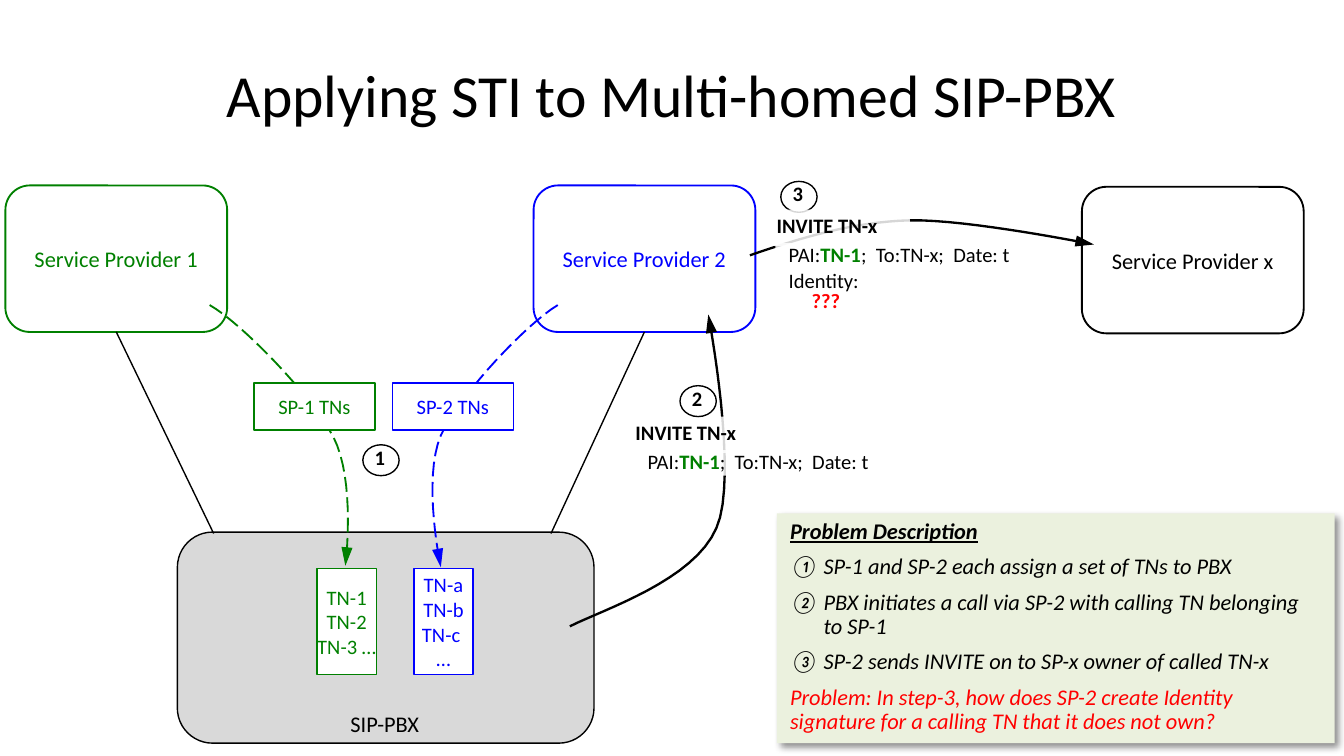
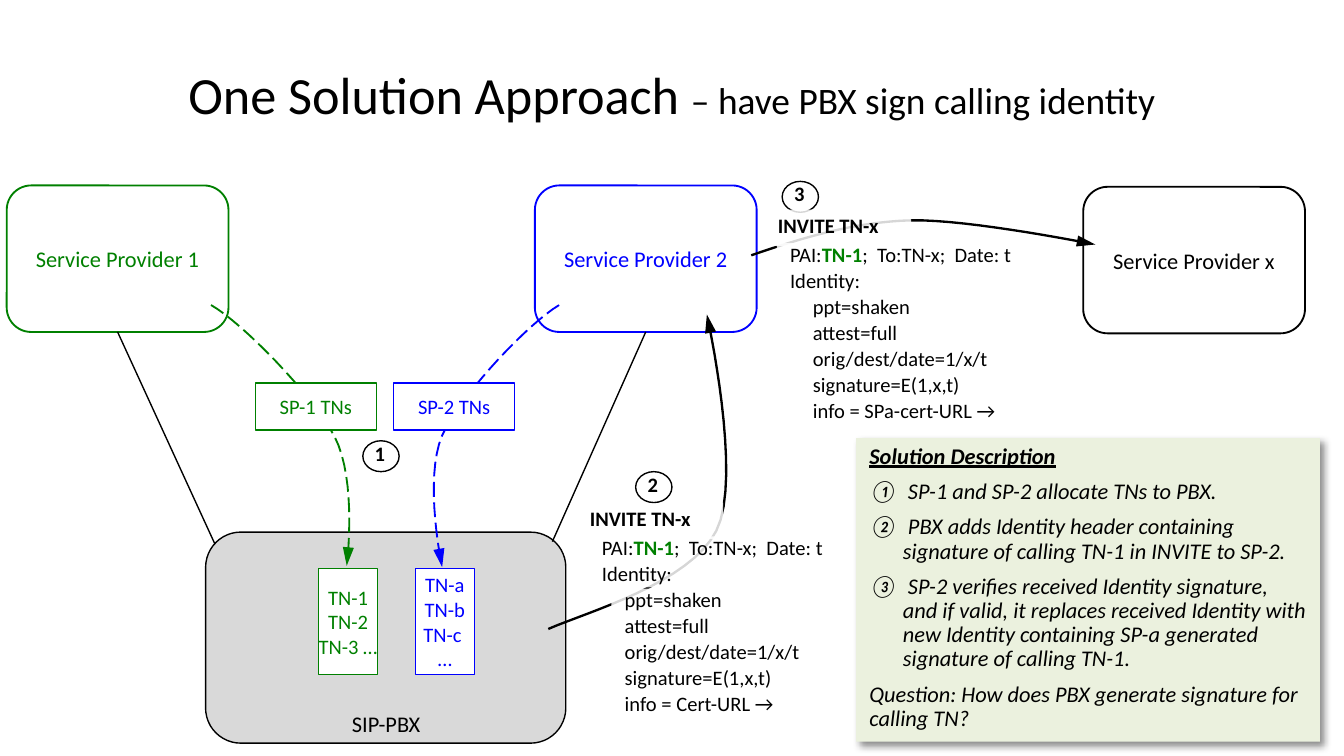
from lxml.etree import SubElement
from pptx import Presentation
from pptx.dml.color import RGBColor
from pptx.enum.dml import MSO_LINE
from pptx.enum.shapes import MSO_CONNECTOR, MSO_SHAPE
from pptx.enum.text import MSO_ANCHOR, MSO_AUTO_SIZE, PP_ALIGN
from pptx.oxml.ns import qn
from pptx.util import Inches, Pt

WIDE = Inches(10)
HIGH = WIDE * 9 // 16
FONT = "Calibri"
HUES = {"black": "000000", "white": "FFFFFF", "green": "008000", "blue": "0000FF",
        "red": "FF0000", "gray": "D9D9D9", "pale": "EBF1DE"}

# Text formats: margins in inches, then paragraph values
FLAT = dict(margins=(0, 0, 0, 0), anchor=MSO_ANCHOR.MIDDLE,
            para=dict(alignment=PP_ALIGN.CENTER))
NOTE = dict(margins=(0.1, 0.05, 0.1, 0.05), grow=True,
            para=dict(alignment=PP_ALIGN.LEFT, line_spacing=0.9, space_before=Pt(6)))
TIGHT = dict(margins=(0.1, 0.01, 0.1, 0.01), grow=True,
             para=dict(alignment=PP_ALIGN.LEFT, line_spacing=0.9, space_before=Pt(2)))

PAI = [("PAI:", {}), ("TN-1", dict(hue="green", bold=True)), (";  To:TN-x;  Date: t", {})]


def put(obj, vals):
    for name, val in vals.items():
        setattr(obj, name, val)


def hue(name):
    return RGBColor.from_string(HUES[name])


def box(at):
    return [Inches(v) for v in at]


# Text
def add_runs(para, runs, base):
    for text, extra in runs:
        look = {"size": 11, "hue": "black", **base, **extra}
        run = para.add_run()
        run.text = text
        run.font.color.rgb = hue(look.pop("hue"))
        look["size"] = Pt(look["size"])
        put(run.font, {"name": FONT, **look})


def write(shape, paras, form, wrap=True, **base):
    """Fill a shape with paragraphs, each a string or a list of runs."""
    frame = shape.text_frame
    sides = ("margin_left", "margin_top", "margin_right", "margin_bottom")
    put(frame, dict(zip(sides, box(form["margins"]))))
    fit = MSO_AUTO_SIZE.SHAPE_TO_FIT_TEXT if form.get("grow") else MSO_AUTO_SIZE.NONE
    put(frame, dict(word_wrap=wrap, auto_size=fit,
                    vertical_anchor=form.get("anchor", MSO_ANCHOR.TOP)))
    for i, item in enumerate(paras):
        para = frame.paragraphs[0] if i == 0 else frame.add_paragraph()
        put(para, form["para"])
        add_runs(para, [(item, {})] if isinstance(item, str) else item, base)


def number(para):
    props = para._p.get_or_add_pPr()
    props.set("marL", str(Inches(0.25)))
    props.set("indent", str(-Inches(0.25)))
    SubElement(props, qn("a:buFont"), typeface="+mj-lt")
    SubElement(props, qn("a:buAutoNum"), type="circleNumDbPlain")


def add_title(slide, runs, size):
    title = slide.shapes.title
    put(title, dict(zip(("left", "top", "width", "height"), box((0.5, 0.23, 9, 0.94)))))
    form = {**FLAT, "margins": (0.1, 0.05, 0.1, 0.05)}
    write(title, [runs], form, size=size)


# Shapes and lines
def add_box(shapes, kind, at, fill=None, line=None, width=0.75):
    shape = shapes.add_shape(kind, *box(at))
    shape.shadow.inherit = False
    if fill:
        shape.fill.solid()
        shape.fill.fore_color.rgb = hue(fill)
    else:
        shape.fill.background()
    if line:
        shape.line.color.rgb = hue(line)
        shape.line.width = Pt(width)
    else:
        shape.line.fill.background()
    return shape


def add_label(slide, text, at, color, kind=MSO_SHAPE.RECTANGLE, size=11, width=0.75,
              wrap=True):
    shape = add_box(slide.shapes, kind, at, "white", color, width)
    write(shape, text, FLAT, wrap, hue=color, size=size)
    return shape


def add_party(slide, name, x, y, color):
    return add_label(slide, ["Service Provider " + name], (x, y, 1.65, 1.09), color,
                     MSO_SHAPE.ROUNDED_RECTANGLE, 12, 1)


def add_veil(slide, paras, at, form, wrap=True, **base):
    shape = add_box(slide.shapes, MSO_SHAPE.RECTANGLE, at, "white")
    tint = shape.element.spPr.find(qn("a:solidFill") + "/" + qn("a:srgbClr"))
    SubElement(tint, qn("a:alpha"), val="84000")
    write(shape, paras, form, wrap, **base)


def add_link(slide, start, party):
    mid = party.left + party.width // 2
    link = slide.shapes.add_connector(MSO_CONNECTOR.STRAIGHT, *box(start),
                                      mid, party.top + party.height)
    link.end_connect(party, 2)
    link.line.color.rgb = hue("black")
    link.line.width = Pt(0.75)
    SubElement(link.element.spPr, qn("a:effectLst"))


def add_curve(slide, dots, color="black", width=1.25, dash=False, dx=0, steps=16):
    """Draw an arrow along cubic curves: a start, then three dots for each curve."""
    dots = [(Inches(x + dx), Inches(y)) for x, y in dots]
    trail = []
    for i in range(0, len(dots) - 1, 3):
        for k in range(1, steps + 1):
            t = k / steps
            parts = ((1 - t) ** 3, 3 * t * (1 - t) ** 2, 3 * t * t * (1 - t), t ** 3)
            trail.append(tuple(sum(w * dot[axis] for w, dot in zip(parts, dots[i:i + 4]))
                               for axis in (0, 1)))
    pen = slide.shapes.build_freeform(*dots[0])
    pen.add_line_segments(trail, close=False)
    curve = pen.convert_to_shape()
    curve.shadow.inherit = False
    curve.fill.background()
    curve.line.color.rgb = hue(color)
    curve.line.width = Pt(width)
    if dash:
        curve.line.dash_style = MSO_LINE.LONG_DASH
    SubElement(curve.element.spPr.find(qn("a:ln")), qn("a:tailEnd"),
               type="triangle", w="med", len="lg")


# Call flow parts
def add_step(slide, text, x, y):
    group = slide.shapes.add_group_shape()
    write(group.shapes.add_textbox(*box((x, y, 0.33, 0.27))), [text], NOTE, bold=True)
    add_box(group.shapes, MSO_SHAPE.OVAL, (x + 0.01, y + 0.03, 0.27, 0.23), line="black")


def add_invite(slide, x, y, signed=True):
    add_veil(slide, ["INVITE TN-x"], (x, y, 1.09, 0.27), NOTE, False, bold=True)
    rows = [PAI, "Identity:"] if signed else [PAI]
    add_veil(slide, rows, (x + 0.09, y + 0.25, 2.15, 0.19 * len(rows)), TIGHT)


def add_claims(slide, x, y, cert):
    rows = ["ppt=shaken", "attest=full", "orig/dest/date=1/x/t", "signature=E(1,x,t)",
            f"info = {cert} →"]
    add_veil(slide, rows, (x + 0.26, y + 0.64, 1.96, 0.97), TIGHT)


def add_panel(slide, at, head, steps, last, color="black"):
    panel = add_box(slide.shapes, MSO_SHAPE.RECTANGLE, at, "pale")
    glow = SubElement(panel.element.spPr.find(qn("a:effectLst")), qn("a:outerShdw"),
                      blurRad=str(Pt(4)), dist=str(Pt(3)), dir="2700000",
                      algn="tl", rotWithShape="0")
    tint = SubElement(glow, qn("a:srgbClr"), val=HUES["black"])
    SubElement(tint, qn("a:alpha"), val="43000")
    paras = [[(head, dict(bold=True, underline=True))], *steps, [(last, dict(hue=color))]]
    write(panel, paras, NOTE, size=12, italic=True)
    for para in panel.text_frame.paragraphs[1:-1]:
        number(para)


def add_scene(slide, dx, pbx, feet, call):
    """Draw the network both slides share, moved right by dx."""
    one = add_party(slide, "1", 0.04 + dx, 1.38, "green")
    add_box(slide.shapes, MSO_SHAPE.ROUNDED_RECTANGLE, pbx, "gray", "black")
    name = slide.shapes.add_textbox(*box((2.51 + dx, 5.26, 0.87, 0.29)))
    write(name, ["SIP-PBX"], NOTE, False, size=12)
    two = add_party(slide, "2", 3.97 + dx, 1.38, "blue")
    for foot, party in zip(feet, (one, two)):
        add_link(slide, foot, party)

    # Number assignment
    add_curve(slide, [(4.15, 2.27), (3.93, 2.4), (3.43, 2.92), (3.28, 3.24),
                      (3.14, 3.57), (3.28, 4.22), (3.28, 4.22)], "blue", 1, True, dx)
    add_curve(slide, [(1.56, 2.27), (1.79, 2.4), (2.31, 2.93), (2.48, 3.25),
                      (2.65, 3.58), (2.57, 4.21), (2.57, 4.21)], "green", 1, True, dx)
    add_curve(slide, call)
    sets = [("SP-1 TNs", 1.89, 2.36, "green", ["TN-1 TN-2 TN-3 …"]),
            ("SP-2 TNs", 2.92, 3.08, "blue", ["TN-a TN-b TN-c ", "…"])]
    for text, x, low, color, nums in sets:
        add_label(slide, [text], (x + dx, 2.85, 0.9, 0.35), color, wrap=False)
        add_label(slide, nums, (low + dx, 4.23, 0.44, 0.79), color)

    # Onward call
    add_party(slide, "x", 8.05 + dx, 1.39, "black")
    add_curve(slide, [(5.58, 1.9), (5.96, 1.77), (6.35, 1.65), (6.77, 1.64),
                      (7.2, 1.63), (8.14, 1.82), (8.14, 1.82)], dx=dx)
    add_step(slide, "3", 5.8 + dx, 1.32)


def add_problem(deck):
    slide = deck.slides.add_slide(deck.slide_layouts[5])
    add_title(slide, [("Applying STI to Multi-homed SIP-PBX", {})], 32)
    add_scene(slide, 0, (1.32, 3.96, 3.1, 1.57), [(1.59, 3.97), (4.1, 3.97)],
              [(4.24, 4.66), (4.5, 4.53), (5.16, 4.32), (5.33, 3.93),
               (5.5, 3.55), (5.27, 2.34), (5.27, 2.34)])
    add_invite(slide, 4.63, 3.1, signed=False)
    add_veil(slide, ["???"], (5.94, 2.15, 0.55, 0.19), TIGHT, hue="red", bold=True)
    add_invite(slide, 5.68, 1.56)
    add_step(slide, "1", 2.69, 3.28)
    add_step(slide, "2", 5.05, 2.84)
    add_panel(slide, (5.78, 3.82, 4.15, 1.71), "Problem Description",
              ["SP-1 and SP-2 each assign a set of TNs to PBX",
               "PBX initiates a call via SP-2 with calling TN belonging to SP-1",
               "SP-2 sends INVITE on to SP-x owner of called TN-x"],
              "Problem: In step-3, how does SP-2 create Identity signature for a "
              "calling TN that it does not own?", "red")


def add_answer(deck):
    slide = deck.slides.add_slide(deck.slide_layouts[5])
    add_title(slide, [("One Solution Approach ", {}),
                      ("– have PBX sign calling identity", dict(size=20))], 28)
    add_scene(slide, 0.01, (1.53, 3.96, 2.68, 1.57), [(1.6, 4.05), (4.11, 4.03)],
              [(4.08, 4.68), (4.38, 4.55), (5.13, 4.34), (5.33, 3.95),
               (5.53, 3.56), (5.26, 2.34), (5.26, 2.34)])
    for x, y, cert in ((4.29, 3.74, "Cert-URL"), (5.69, 1.56, "SPa-cert-URL")):
        add_claims(slide, x, y, cert)
        add_invite(slide, x, y)
    add_step(slide, "1", 2.69, 3.25)
    add_step(slide, "2", 4.72, 3.48)
    add_panel(slide, (6.37, 3.26, 3.45, 2.26), "Solution Description",
              [" SP-1 and SP-2 allocate TNs to PBX.",
               " PBX adds Identity header containing signature of calling TN-1 in "
               "INVITE to SP-2.",
               " SP-2 verifies received Identity signature, and if valid, it replaces "
               "received Identity with new Identity containing SP-a generated signature "
               "of calling TN-1."],
              "Question: How does PBX generate signature for calling TN?")


def main():
    deck = Presentation()
    put(deck, dict(slide_width=WIDE, slide_height=HIGH))
    add_problem(deck)
    add_answer(deck)
    deck.save("out.pptx")


if __name__ == "__main__":
    main()
